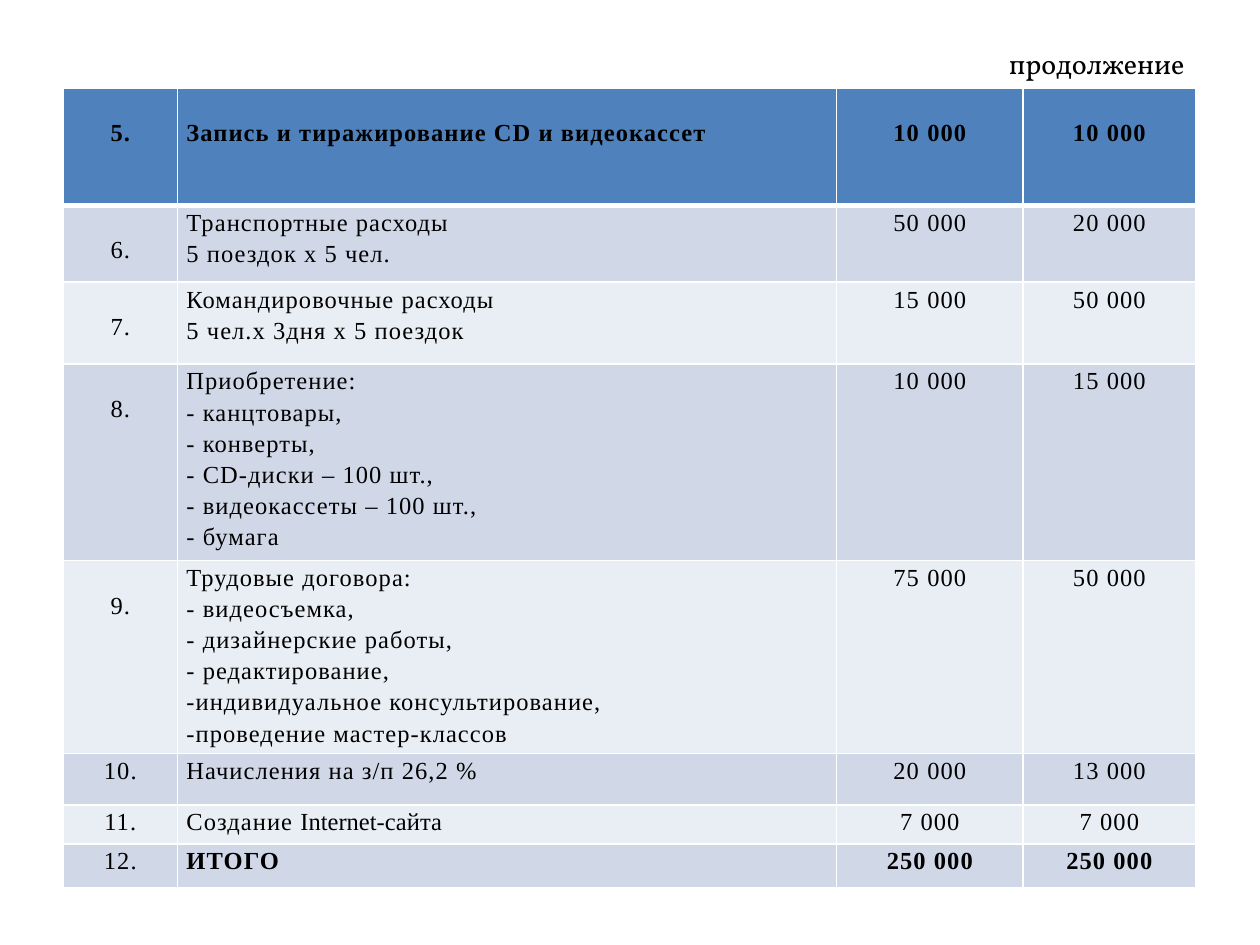
from lxml.etree import SubElement
from pptx import Presentation
from pptx.dml.color import RGBColor
from pptx.enum.text import MSO_ANCHOR, PP_ALIGN as Align
from pptx.oxml.ns import qn
from pptx.util import Inches, Pt

COLORS = {
    "text": "000000",
    "border": "FFFFFF",
    "header": "4F81BD",
    "odd": "D0D8E8",
    "even": "E9EDF4",
}
COLUMN_WIDTHS = [0.91, 5.23, 1.48, 1.37]
COLUMN_ALIGNS = [Align.CENTER, Align.JUSTIFY, Align.CENTER, Align.CENTER]
CELL_MARGINS = {"margin_left": 0.07, "margin_right": 0.07,
                "margin_top": 0, "margin_bottom": 0}
LOWERED = 0.22  # top margin of cells whose text starts lower
TRACKING = 0.6

# Row height, number, expense lines, two amounts
EXPENSES = [
    (0.93, "5.", ["Запись и тиражирование СD и видеокассет"], "10 000", "10 000"),
    (0.61, "6.", ["Транспортные расходы", "5 поездок х 5 чел."], "50 000", "20 000"),
    (0.65, "7.", ["Командировочные расходы", "5 чел.х 3дня х 5 поездок"],
     "15 000", "50 000"),
    (1.56, "8.", ["Приобретение:", "- канцтовары,", "- конверты,",
                  "- СD-диски – 100 шт.,", "- видеокассеты – 100 шт.,", "- бумага"],
     "10 000", "15 000"),
    (1.53, "9.", ["Трудовые договора:", "- видеосъемка,", "- дизайнерские работы,",
                  "- редактирование,", "-индивидуальное консультирование,",
                  "-проведение мастер-классов"], "75 000", "50 000"),
    (0.41, "10.", ["Начисления на з/п 26,2 %"], "20 000", "13 000"),
    (0.31, "11.", ["Создание |Internet-сайта"], "7 000", "7 000"),
    (0.35, "12.", ["ИТОГО"], "250 000", "250 000"),
]
LAST_LOWERED_ROW = 4


def add_run(paragraph, text, size, font_name, bold=False, tracking=0):
    run = paragraph.add_run()
    run.text = text
    formats = {"size": Pt(size), "name": font_name, "bold": bold}
    for name, value in formats.items():
        setattr(run.font, name, value)
    run.font.color.rgb = RGBColor.from_string(COLORS["text"])
    if tracking:
        run._r.get_or_add_rPr().set("spc", str(round(tracking * 100)))


def set_borders(cell, widths):
    properties = cell._tc.get_or_add_tcPr()
    for side in "LRTB":
        line = SubElement(properties, qn(f"a:ln{side}"), w=str(Pt(widths.get(side, 1))))
        fill = SubElement(line, qn("a:solidFill"))
        SubElement(fill, qn("a:srgbClr"), val=COLORS["border"])


def write_cell(cell, lines, align, bold):
    """Write the lines; text after a bar has normal letter spacing."""
    frame = cell.text_frame
    for index, line in enumerate(lines):
        paragraph = frame.add_paragraph() if index else frame.paragraphs[0]
        paragraph.alignment = align
        paragraph.line_spacing = 1.15
        for part, text in enumerate(line.split("|")):
            add_run(paragraph, text, 14, "Times New Roman", bold,
                    0 if part else TRACKING)


def add_title(slide):
    title = slide.shapes.title
    box = {"left": 0.5, "top": 0.3, "width": 9, "height": 0.4}
    for name, value in box.items():
        setattr(title, name, Inches(value))
    title.text_frame.vertical_anchor = MSO_ANCHOR.MIDDLE
    paragraph = title.text_frame.paragraphs[0]
    paragraph.alignment = Align.RIGHT
    add_run(paragraph, "продолжение", 16, "Vollkorn")


def add_budget(slide):
    height = sum(expense[0] for expense in EXPENSES)
    budget = slide.shapes.add_table(
        len(EXPENSES), len(COLUMN_WIDTHS), Inches(0.5), Inches(0.7),
        Inches(sum(COLUMN_WIDTHS)), Inches(height)).table
    for column, width in zip(budget.columns, COLUMN_WIDTHS):
        column.width = Inches(width)

    for row, (row_height, number, expense, planned, granted) in enumerate(EXPENSES):
        budget.rows[row].height = Inches(row_height)
        is_header, is_total = row == 0, row == len(EXPENSES) - 1
        band = "header" if is_header else "odd" if row % 2 else "even"
        # The rule under the header is thicker
        borders = {0: {"B": 3}, 1: {"T": 3}}.get(row, {})
        contents = [[number], expense, [planned], [granted]]
        for column, lines in enumerate(contents):
            cell = budget.cell(row, column)
            for name, value in CELL_MARGINS.items():
                setattr(cell, name, Inches(value))
            if is_header or (column == 0 and row <= LAST_LOWERED_ROW):
                cell.margin_top = Inches(LOWERED)
            set_borders(cell, borders)
            cell.fill.solid()
            cell.fill.fore_color.rgb = RGBColor.from_string(COLORS[band])
            bold = is_header or (is_total and column > 0)
            write_cell(cell, lines, COLUMN_ALIGNS[column], bold)


def main():
    deck = Presentation()
    deck.slide_width, deck.slide_height = Inches(10), Inches(7.5)
    slide = deck.slides.add_slide(deck.slide_layouts[5])
    add_title(slide)
    add_budget(slide)
    deck.save("out.pptx")


if __name__ == "__main__":
    main()
